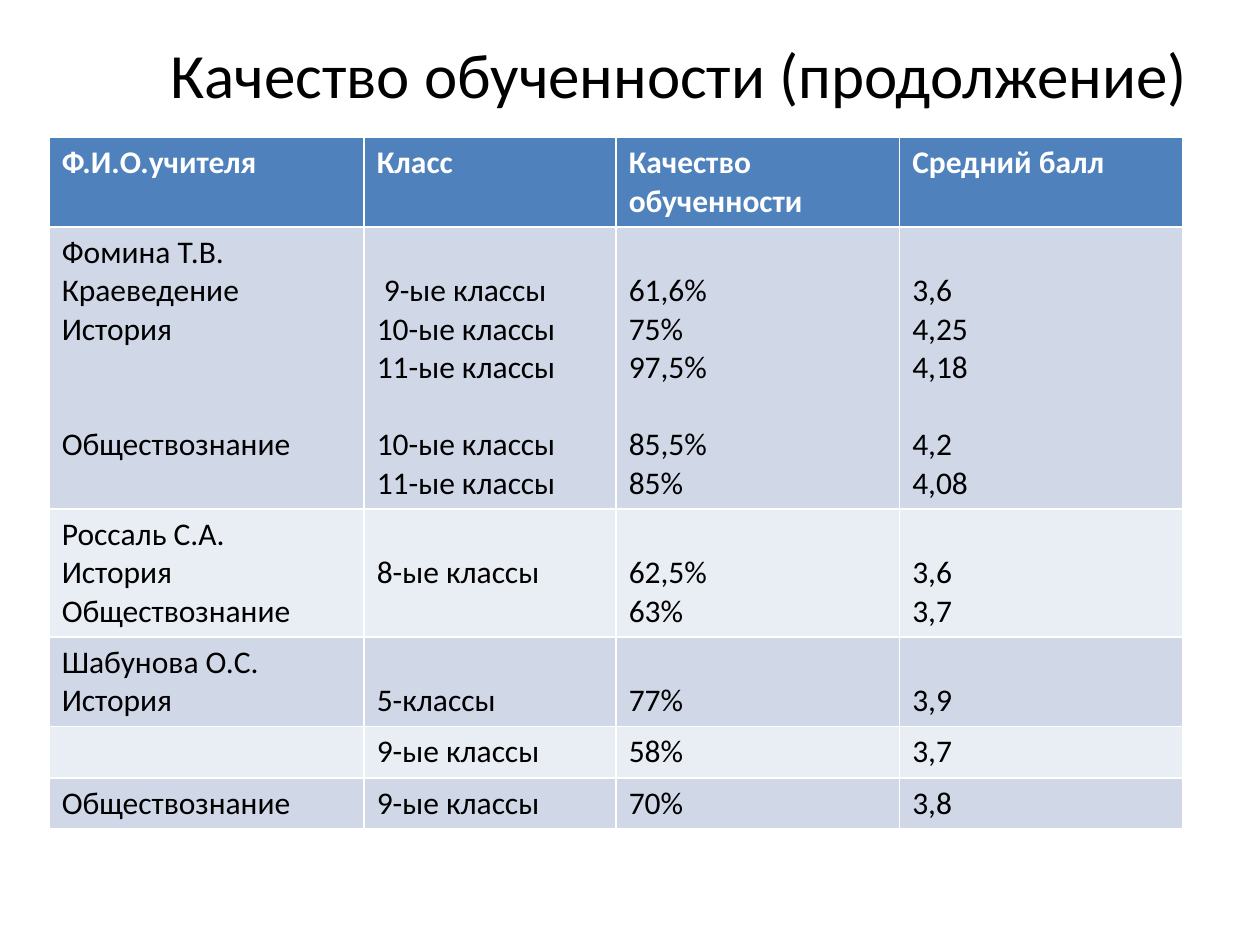
from dataclasses import dataclass

from pptx import Presentation
from pptx.dml.color import RGBColor
from pptx.enum.text import MSO_ANCHOR, MSO_AUTO_SIZE, PP_ALIGN
from pptx.util import Inches, Pt

MIDDLE = MSO_ANCHOR.MIDDLE
NO_AUTOFIT = MSO_AUTO_SIZE.NONE
CENTER = PP_ALIGN.CENTER
TITLE_ONLY = 5
GAP = None


@dataclass(frozen=True)
class Theme:
    font: str = "Calibri"
    title_size: int = 36
    table_size: int = 18
    line_height: int = 22
    margin: float = 0.05
    text: str = "000000"
    header_text: str = "FFFFFF"
    header_fill: str = "4F81BD"
    band_fills: tuple = ("D0D8E8", "E9EDF4")


class SlideBuilder:
    def __init__(self, presentation, theme):
        self.theme = theme
        self.slide = presentation.slides.add_slide(presentation.slide_layouts[TITLE_ONLY])

    def style(self, paragraph, size, color, bold=False):
        font = paragraph.font
        font.name = self.theme.font
        font.size = Pt(size)
        font.bold = bold
        font.color.rgb = RGBColor.from_string(color)

    def title(self, wording, left, top, width, height):
        title = self.slide.shapes.title
        title.left, title.top = Inches(left), Inches(top)
        title.width, title.height = Inches(width), Inches(height)
        frame = title.text_frame
        frame.text = wording
        frame.word_wrap = True
        frame.auto_size = NO_AUTOFIT
        frame.vertical_anchor = MIDDLE
        heading = frame.paragraphs[0]
        heading.alignment = CENTER
        self.style(heading, self.theme.title_size, self.theme.text)

    def cell(self, cell, lines, fill, color, bold):
        cell.fill.solid()
        cell.fill.fore_color.rgb = RGBColor.from_string(fill)
        cell.margin_top = cell.margin_bottom = Inches(self.theme.margin)
        paragraph = cell.text_frame.paragraphs[0]
        self.style(paragraph, self.theme.table_size, color, bold)
        started, skipped = False, 0
        for line in lines:
            if line is GAP:
                skipped += 1
                continue
            space = Pt(skipped * self.theme.line_height)
            if started:
                paragraph = cell.text_frame.add_paragraph()
                paragraph.space_before = space
            else:
                cell.margin_top = Inches(self.theme.margin) + space
            paragraph.text = line
            self.style(paragraph, self.theme.table_size, color, bold)
            started, skipped = True, 0

    def table(self, header, records, left, top, widths):
        theme = self.theme
        rows = [[[label] for label in header], *records]
        line_counts = [2] + [max(map(len, record)) for record in records]
        heights = [Inches(2 * theme.margin) + Pt(theme.line_height * count)
                   for count in line_counts]
        table = self.slide.shapes.add_table(
            len(rows), len(widths), Inches(left), Inches(top),
            Inches(sum(widths)), sum(heights)).table
        for column, width in zip(table.columns, widths):
            column.width = Inches(width)
        for index, (row, height, entries) in enumerate(zip(table.rows, heights, rows)):
            row.height = height
            is_header = index == 0
            fill = theme.header_fill if is_header else theme.band_fills[(index - 1) % 2]
            color = theme.header_text if is_header else theme.text
            for cell, lines in zip(row.cells, entries):
                self.cell(cell, lines, fill, color, is_header)


HEADER = ["Ф.И.О.учителя", "Класс", "Качество обученности", "Средний балл"]
RECORDS = [
    [
        ["Фомина Т.В.", "Краеведение", "История", GAP, GAP, "Обществознание"],
        [GAP, " 9-ые классы", "10-ые классы", "11-ые классы", GAP,
         "10-ые классы", "11-ые классы"],
        [GAP, "61,6%", "75%", "97,5%", GAP, "85,5%", "85%"],
        [GAP, "3,6", "4,25", "4,18", GAP, "4,2", "4,08"],
    ],
    [
        ["Россаль С.А.", "История", "Обществознание"],
        [GAP, "8-ые классы"],
        [GAP, "62,5%", "63%"],
        [GAP, "3,6", "3,7"],
    ],
    [["Шабунова О.С.", "История"], [GAP, "5-классы"], [GAP, "77%"], [GAP, "3,9"]],
    [[], ["9-ые классы"], ["58%"], ["3,7"]],
    [["Обществознание"], ["9-ые классы"], ["70%"], ["3,8"]],
]


def main():
    presentation = Presentation()
    presentation.slide_width, presentation.slide_height = Inches(10), Inches(7.5)
    builder = SlideBuilder(presentation, Theme())
    builder.title("Качество обученности (продолжение)", 0, 0, 10.78, 1.17)
    builder.table(HEADER, RECORDS, 0.39, 1.09, [2.5, 2, 2.25, 2.25])
    presentation.save("out.pptx")


if __name__ == "__main__":
    main()
